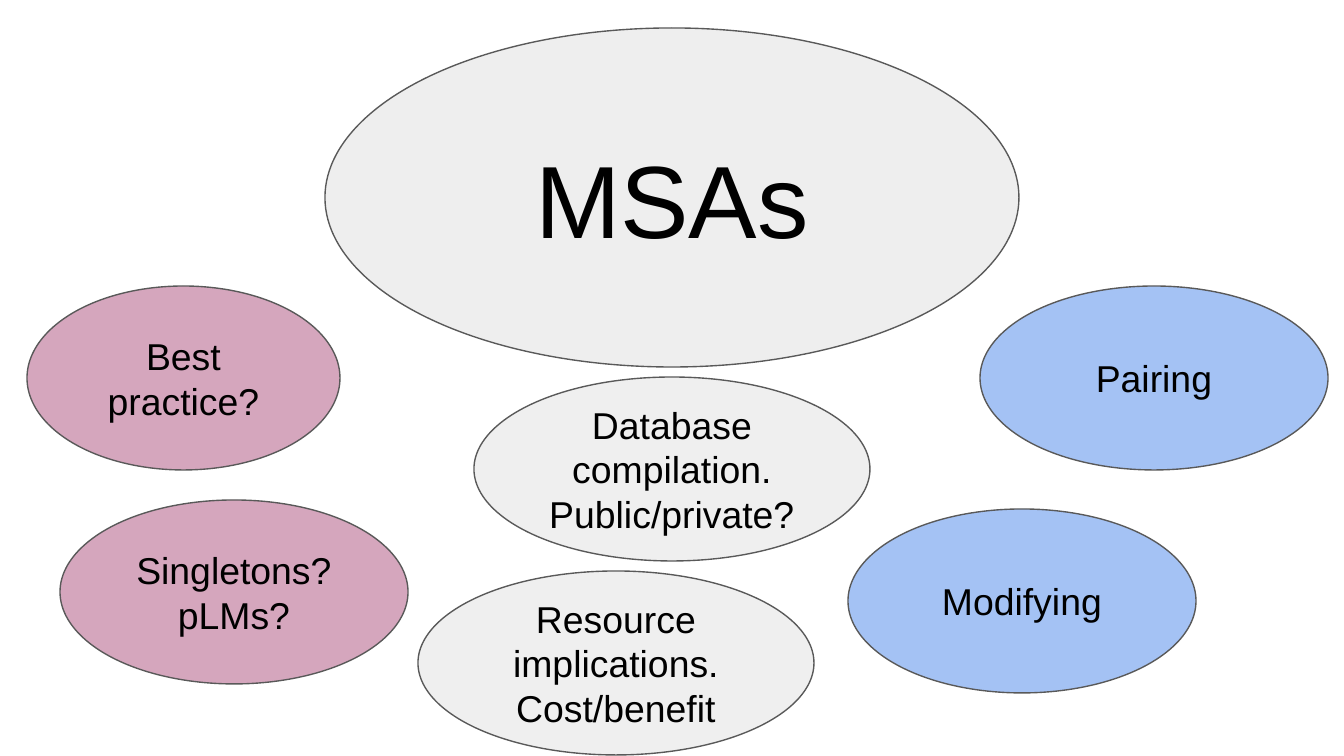
"""Builds a slide of ellipses mapping the topics around MSAs."""
from dataclasses import dataclass

from pptx import Presentation
from pptx.dml.color import RGBColor
from pptx.enum.shapes import MSO_SHAPE
from pptx.enum.text import MSO_ANCHOR, PP_ALIGN
from pptx.slide import Slide
from pptx.util import Emu, Inches, Pt

PIXELS_PER_INCH = 134.4
TOPIC_HEIGHT = 184
COLORS = {
    "hub": "EEEEEE",
    "practice": "D5A6BD",
    "method": "A4C2F4",
    "resource": "EFEFEF",
    "outline": "595959",
    "text": "000000",
}


@dataclass(frozen=True)
class Bubble:
    text: str
    color: str
    left: int
    top: int
    width: int
    height: int = TOPIC_HEIGHT
    font_size: int = 20


BUBBLES = [
    Bubble("MSAs", "hub", 325, 28, 694, 339, 55),
    Bubble("Best practice?", "practice", 27, 286, 313),
    Bubble("Singletons? pLMs?", "practice", 60, 500, 348),
    Bubble("Pairing", "method", 980, 286, 348),
    Bubble("Modifying", "method", 848, 509, 348),
    Bubble("Resource implications. Cost/benefit", "resource", 418, 571, 396),
    Bubble("Database compilation. Public/private?", "resource", 474, 377, 396),
]


def px(length: int) -> Emu:
    return Inches(length / PIXELS_PER_INCH)


def color(name: str) -> RGBColor:
    return RGBColor.from_string(COLORS[name])


def draw_bubble(page: Slide, bubble: Bubble) -> None:
    shape = page.shapes.add_shape(
        MSO_SHAPE.OVAL,
        px(bubble.left), px(bubble.top), px(bubble.width), px(bubble.height),
    )
    shape.shadow.inherit = False
    shape.fill.solid()
    shape.fill.fore_color.rgb = color(bubble.color)
    shape.line.color.rgb = color("outline")
    shape.line.width = Pt(0.75)

    frame = shape.text_frame
    frame.word_wrap = True
    frame.vertical_anchor = MSO_ANCHOR.MIDDLE
    frame.margin_left = frame.margin_right = Inches(0.1)
    frame.margin_top = frame.margin_bottom = Inches(0.1)

    paragraph = frame.paragraphs[0]
    paragraph.text = bubble.text
    paragraph.alignment = PP_ALIGN.CENTER
    paragraph.font.name = "Arial"
    paragraph.font.size = Pt(bubble.font_size)
    paragraph.font.color.rgb = color("text")


def main() -> None:
    deck = Presentation()
    deck.slide_width = px(1344)
    deck.slide_height = px(756)
    page = deck.slides.add_slide(deck.slide_layouts[6])
    for bubble in BUBBLES:
        draw_bubble(page, bubble)
    deck.save("out.pptx")


if __name__ == "__main__":
    main()
